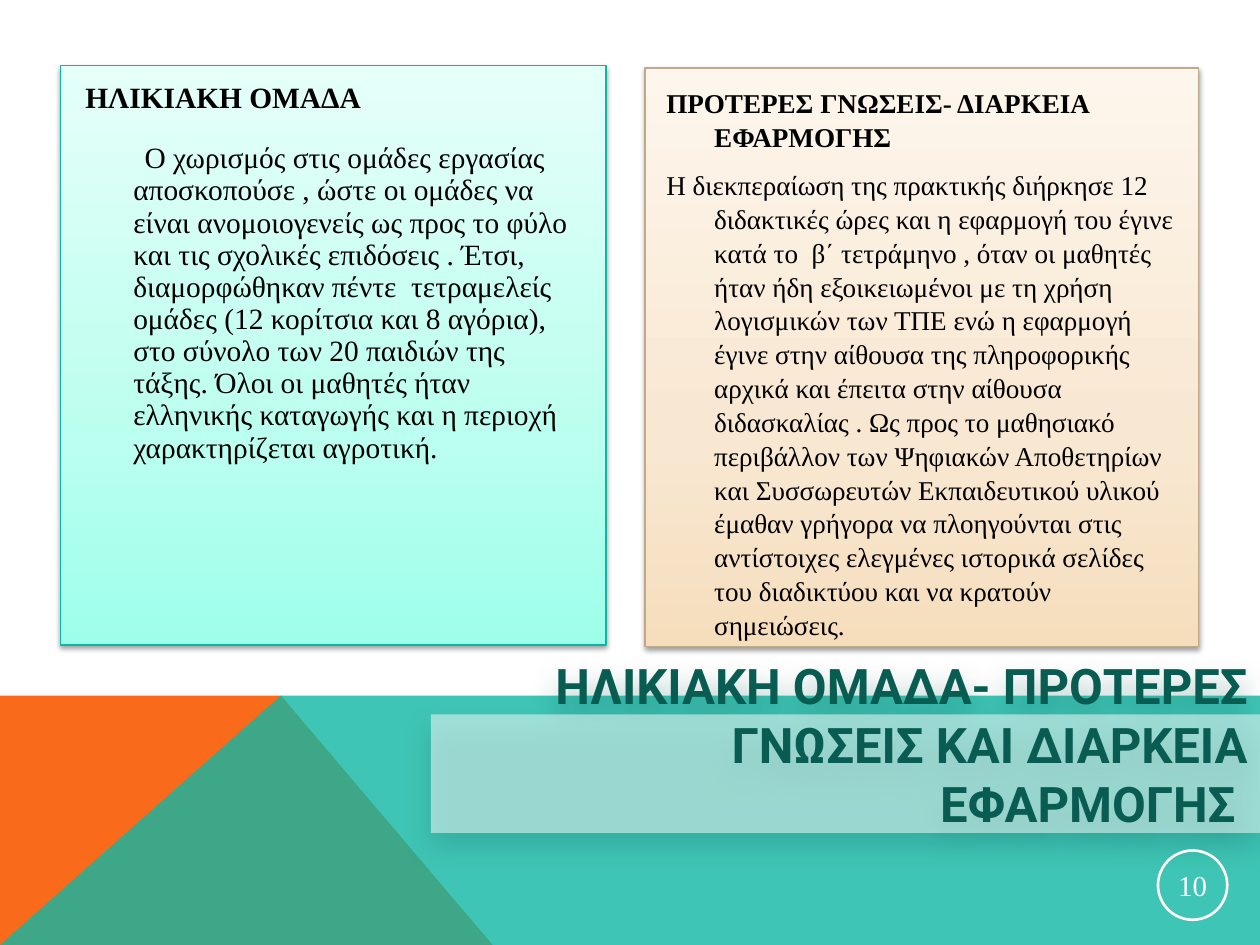
from lxml import etree
from pptx import Presentation
from pptx.dml.color import RGBColor
from pptx.enum.shapes import MSO_SHAPE
from pptx.enum.text import MSO_ANCHOR, PP_ALIGN
from pptx.oxml import parse_xml
from pptx.oxml.ns import nsdecls, qn
from pptx.util import Inches, Pt

RECTANGLE, OVAL = MSO_SHAPE.RECTANGLE, MSO_SHAPE.OVAL
MIDDLE = MSO_ANCHOR.MIDDLE
RIGHT, CENTER = PP_ALIGN.RIGHT, PP_ALIGN.CENTER

BLACK = RGBColor(0x00, 0x00, 0x00)
WHITE = RGBColor(0xFF, 0xFF, 0xFF)
ORANGE = RGBColor(0xF9, 0x6A, 0x1B)
TEAL = RGBColor(0x10, 0xB7, 0xA3)
DARK_TEAL = RGBColor(0x08, 0x5C, 0x52)
MINT_LINE = RGBColor(0x0C, 0xB7, 0xA3)
SAND_LINE = RGBColor(0xBF, 0xA9, 0x89)
MINT = (RGBColor(0x9D, 0xFF, 0xEA), RGBColor(0xBA, 0xFF, 0xEF), RGBColor(0xE5, 0xFF, 0xF9))
SAND = (RGBColor(0xF6, 0xDE, 0xBD), RGBColor(0xF8, 0xE7, 0xD1), RGBColor(0xFD, 0xF6, 0xEC))
GRADIENT_STOPS = (0, 35, 100)

SERIF, SANS = "Times New Roman", "Roboto"

TITLE = "ΗΛΙΚΙΑΚΗ ΟΜΑΔΑ- ΠΡΟΤΕΡΕΣ ΓΝΩΣΕΙΣ ΚΑΙ ΔΙΑΡΚΕΙΑ ΕΦΑΡΜΟΓΗΣ "
AGE_HEADING = "ΗΛΙΚΙΑΚΗ ΟΜΑΔΑ"
AGE_TEXT = (
    "Ο χωρισμός στις ομάδες εργασίας αποσκοπούσε , ώστε οι ομάδες να είναι "
    "ανομοιογενείς ως προς το φύλο και τις σχολικές επιδόσεις . Έτσι, "
    "διαμορφώθηκαν πέντε  τετραμελείς ομάδες (12 κορίτσια και 8 αγόρια), στο "
    "σύνολο των 20 παιδιών της τάξης. Όλοι οι μαθητές ήταν ελληνικής καταγωγής "
    "και η περιοχή χαρακτηρίζεται αγροτική."
)
DURATION_HEADING = "ΠΡΟΤΕΡΕΣ ΓΝΩΣΕΙΣ- ΔΙΑΡΚΕΙΑ ΕΦΑΡΜΟΓΗΣ"
DURATION_TEXT = (
    "Η διεκπεραίωση της πρακτικής διήρκησε 12 διδακτικές ώρες και η εφαρμογή "
    "του έγινε κατά το  β΄ τετράμηνο , όταν οι μαθητές ήταν ήδη εξοικειωμένοι "
    "με τη χρήση λογισμικών των ΤΠΕ ενώ η εφαρμογή έγινε στην αίθουσα της "
    "πληροφορικής αρχικά και έπειτα στην αίθουσα διδασκαλίας . Ως προς το "
    "μαθησιακό περιβάλλον των Ψηφιακών Αποθετηρίων και Συσσωρευτών "
    "Εκπαιδευτικού υλικού έμαθαν γρήγορα να πλοηγούνται στις αντίστοιχες "
    "ελεγμένες ιστορικά σελίδες του διαδικτύου και να κρατούν σημειώσεις."
)


def apply_format(target, values):
    for name, value in values.items():
        setattr(target, name, value)


def set_fill(shape, color, opacity=100):
    shape.fill.solid()
    shape.fill.fore_color.rgb = color
    if opacity < 100:
        for tint in shape.fill._xPr.find(qn("a:solidFill")):
            etree.SubElement(tint, qn("a:alpha"), val=str(opacity * 1000))


def set_gradient(shape, colors):
    stops = "".join(
        f'<a:gs pos="{stop * 1000}"><a:srgbClr val="{color}"/></a:gs>'
        for stop, color in zip(GRADIENT_STOPS, colors)
    )
    gradient = parse_xml(
        f'<a:gradFill {nsdecls("a")} rotWithShape="1"><a:gsLst>{stops}</a:gsLst>'
        '<a:lin ang="16200000" scaled="0"/></a:gradFill>'
    )
    shape._element.spPr.find(qn("a:prstGeom")).addnext(gradient)


def set_shadow(shape, color, opacity, blur, distance):
    shadow = parse_xml(
        f'<a:outerShdw {nsdecls("a")} blurRad="{Pt(blur)}" dist="{Pt(distance)}" '
        f'dir="5400000" algn="ctr" rotWithShape="0"><a:srgbClr val="{color}">'
        f'<a:alpha val="{opacity * 1000}"/></a:srgbClr></a:outerShdw>'
    )
    shape._element.spPr.find(qn("a:effectLst")).append(shadow)


def add_plain_shape(page, kind, box):
    shape = page.shapes.add_shape(kind, *map(Inches, box))
    shape.shadow.inherit = False
    return shape


def write_span(para, text, font):
    span = para.add_run()
    span.text = text
    color = font["color"]
    apply_format(span.font, {key: value for key, value in font.items() if key != "color"})
    span.font.color.rgb = color


def set_indent(para, left, first):
    properties = para._p.get_or_add_pPr()
    properties.set("marL", str(Inches(left)))
    properties.set("indent", str(Inches(first)))


def add_footer_band(page, box):
    left, top, width, height = box
    right, bottom, peak = left + width, top + height, left + 2.23
    bands = (
        ([(left, bottom), (left, top), (peak, top), (left + 3.91, bottom)], ORANGE, 100),
        ([(left, bottom), (peak, top), (right, top), (right, bottom)], TEAL, 80),
    )
    for points, color, opacity in bands:
        corners = [(Inches(x), Inches(y)) for x, y in points]
        builder = page.shapes.build_freeform(*corners[0], scale=1.0)
        builder.add_line_segments(corners[1:], close=True)
        band = builder.convert_to_shape()
        band.shadow.inherit = False
        band.line.fill.background()
        set_fill(band, color, opacity)


def add_panel(page, box, colors, line_color):
    panel = add_plain_shape(page, RECTANGLE, box)
    set_gradient(panel, colors)
    panel.line.color.rgb = line_color
    panel.line.width = Pt(0.75)
    set_shadow(panel, BLACK, 38, 3.1, 1.6)


def add_panel_text(page, box, entries, size, spacing, gap):
    frame = page.shapes.add_textbox(*map(Inches, box)).text_frame
    frame.word_wrap = True
    for index, (text, bold, left, first) in enumerate(entries):
        para = frame.paragraphs[0] if index == 0 else frame.add_paragraph()
        set_indent(para, left, first)
        para.line_spacing = spacing
        para.space_before = Pt(gap if index else 0)
        write_span(para, text, {"name": SERIF, "size": Pt(size), "bold": bold, "color": BLACK})


def add_title(page, box):
    title = add_plain_shape(page, RECTANGLE, box)
    set_fill(title, WHITE, 50)
    title.line.fill.background()
    set_shadow(title, DARK_TEAL, 40, 16, 8)
    frame = title.text_frame
    apply_format(frame, {
        "word_wrap": True, "vertical_anchor": MIDDLE, "margin_bottom": Inches(0.52),
    })
    para = frame.paragraphs[0]
    para.alignment = RIGHT
    write_span(para, TITLE, {"name": SANS, "size": Pt(28), "bold": True, "color": DARK_TEAL})


def add_page_number(page, box):
    badge = add_plain_shape(page, OVAL, box)
    badge.fill.background()
    badge.line.color.rgb = WHITE
    badge.line.width = Pt(1.5)
    frame = badge.text_frame
    apply_format(frame, {f"margin_{side}": Inches(0.01) for side in ("left", "top", "right", "bottom")})
    apply_format(frame, {"word_wrap": False, "vertical_anchor": MIDDLE})
    para = frame.paragraphs[0]
    para.alignment = CENTER
    write_span(para, "10", {"name": SERIF, "size": Pt(16.5), "color": WHITE})


def main():
    deck = Presentation()
    deck.slide_width, deck.slide_height = Inches(10), Inches(7.5)
    page = deck.slides.add_slide(deck.slide_layouts[6])
    add_footer_band(page, (0, 5.52, 10, 1.98))
    add_panel(page, (5.12, 0.54, 4.39, 4.59), SAND, SAND_LINE)
    add_panel(page, (0.48, 0.52, 4.33, 4.6), MINT, MINT_LINE)
    add_title(page, (3.42, 5.67, 6.58, 0.94))
    age = [(AGE_HEADING, True, 0, 0), (AGE_TEXT, False, 0.38, 0.09)]
    add_panel_text(page, (0.58, 0.61, 4.14, 4.44), age, 16.8, 0.91, 16)
    duration = [(DURATION_HEADING, True, 0.38, -0.38), (DURATION_TEXT, False, 0.38, -0.38)]
    add_panel_text(page, (5.19, 0.63, 4.23, 4.44), duration, 15.5, 1.04, 8)
    add_page_number(page, (9.19, 6.75, 0.55, 0.55))
    deck.save("out.pptx")


if __name__ == "__main__":
    main()
